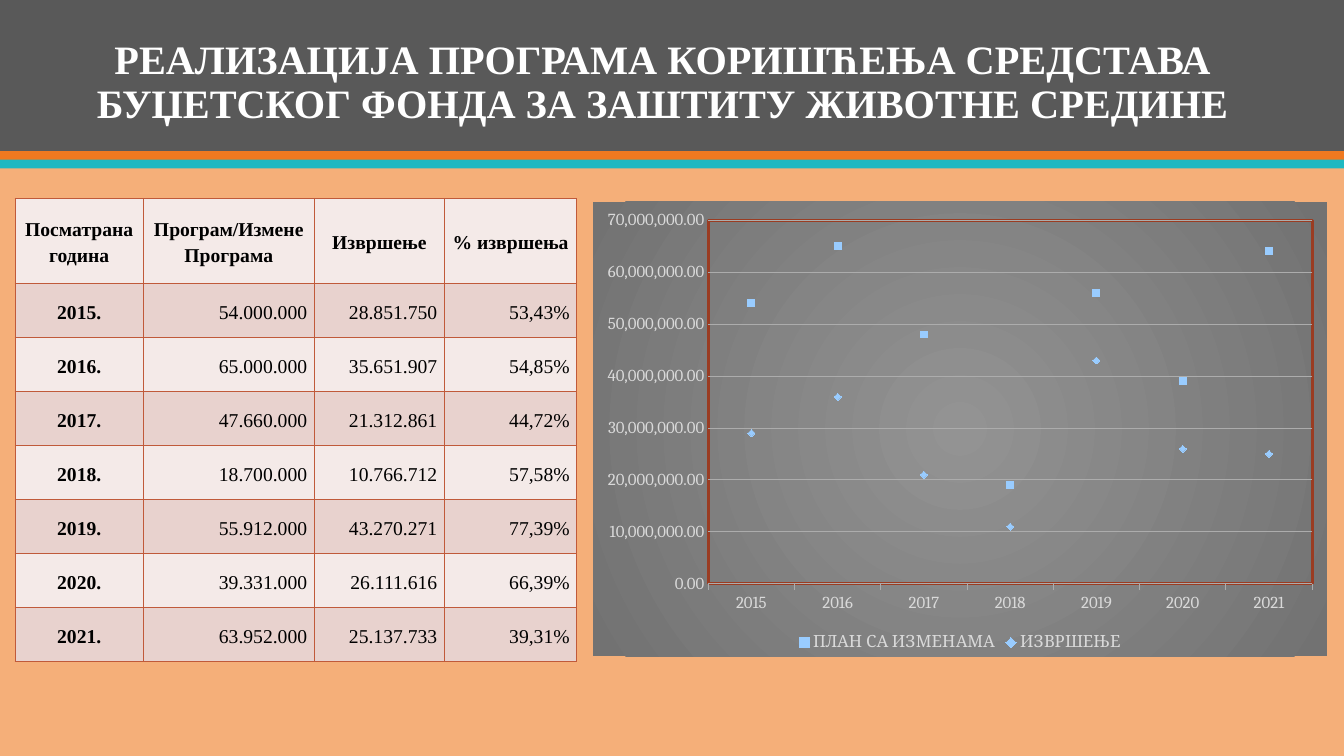
import pptx
import pptx.util
import pptx.chart.data
import pptx.dml.color
import pptx.enum.chart
import pptx.enum.shapes
import pptx.enum.text
import pptx.oxml
import pptx.oxml.ns

RGB = pptx.dml.color.RGBColor
PEACH = RGB(0xF5, 0xAF, 0x79)
DARK = RGB(0x59, 0x59, 0x59)
ORANGE = RGB(0xEF, 0x79, 0x20)
TEAL = RGB(0x1E, 0xB8, 0xC1)
WHITE = RGB(0xFF, 0xFF, 0xFF)
BLACK = RGB(0, 0, 0)
LIGHT = RGB(0xF4, 0xEA, 0xE8)
PINK = RGB(0xE8, 0xD2, 0xCE)
RUST = RGB(0xC0, 0x5A, 0x3A)
BROWN = RGB(0x9A, 0x3C, 0x22)
SILVER = RGB(0xD9, 0xD9, 0xD9)
GREY = RGB(0xAC, 0xAC, 0xAC)
SKY = RGB(0x99, 0xCC, 0xFF)
MID = RGB(0x93, 0x93, 0x93)
EDGE = RGB(0x72, 0x72, 0x72)

Pt = pptx.util.Pt
ALIGN = pptx.enum.text.PP_ALIGN
ANCHOR = pptx.enum.text.MSO_ANCHOR
MARK = pptx.enum.chart.XL_MARKER_STYLE
TICK = pptx.enum.chart.XL_TICK_MARK
NS = pptx.oxml.ns.nsdecls("a", "c")

TITLE = ("РЕАЛИЗАЦИЈА ПРОГРАМА КОРИШЋЕЊА СРЕДСТАВА "
         "БУЏЕТСКОГ ФОНДА ЗА ЗАШТИТУ ЖИВОТНЕ СРЕДИНЕ")
HEADS = ["Посматрана година", "Програм/Измене Програма", "Извршење", "% извршења"]
YEARS = [
    ["2015.", "54.000.000", "28.851.750", "53,43%"],
    ["2016.", "65.000.000", "35.651.907", "54,85%"],
    ["2017.", "47.660.000", "21.312.861", "44,72%"],
    ["2018.", "18.700.000", "10.766.712", "57,58%"],
    ["2019.", "55.912.000", "43.270.271", "77,39%"],
    ["2020.", "39.331.000", "26.111.616", "66,39%"],
    ["2021.", "63.952.000", "25.137.733", "39,31%"],
]
SERIES = [("ПЛАН СА ИЗМЕНАМА", 1, MARK.SQUARE), ("ИЗВРШЕЊЕ", 2, MARK.DIAMOND)]


class Page:
    """Places elements on a grid of 100 columns by 100 rows."""
    serif = "Times New Roman"
    label = "Cambria"

    def __init__(self, deck):
        self.wide, self.high = deck.slide_width, deck.slide_height
        self.slide = deck.slides.add_slide(deck.slide_layouts[5])
        self.shapes = self.slide.shapes
        back = self.slide.background.fill
        back.solid()
        back.fore_color.rgb = PEACH

    def col(self, share):
        return round(self.wide * share / 100)

    def row(self, share):
        return round(self.high * share / 100)

    def box(self, x, y, w, h):
        return self.col(x), self.row(y), self.col(w), self.row(h)

    def font(self, font, name, size, color, bold=False):
        font.name, font.size, font.bold = name, Pt(size), bold
        font.color.rgb = color

    def band(self, y, h, color):
        bar = self.shapes.add_shape(
            pptx.enum.shapes.MSO_SHAPE.RECTANGLE, *self.box(0, y, 100, h))
        bar.shadow.inherit = False
        bar.fill.solid()
        bar.fill.fore_color.rgb = color
        bar.line.fill.background()

    def title(self, text, *area):
        head = self.shapes.title
        head.left, head.top, head.width, head.height = self.box(*area)
        frame = head.text_frame
        frame.text = text
        frame.word_wrap = True
        frame.vertical_anchor = ANCHOR.BOTTOM
        para = frame.paragraphs[0]
        para.alignment, para.line_spacing = ALIGN.CENTER, 0.9
        self.font(para.font, self.serif, 28.8, WHITE, True)
        head.element.getparent().append(head.element)  # in front of the bands

    def cell(self, cell, text, fill, strong, align):
        cell.text = text
        cell.vertical_anchor = ANCHOR.MIDDLE
        cell.margin_left = cell.margin_right = pptx.util.Inches(0.07)
        cell.margin_top = cell.margin_bottom = 0
        cell.fill.solid()
        cell.fill.fore_color.rgb = fill
        para = cell.text_frame.paragraphs[0]
        para.alignment, para.line_spacing = align, 1.2
        self.font(para.font, self.serif, 14, BLACK, strong)
        props = cell._tc.get_or_add_tcPr()
        for spot, side in enumerate("LRTB"):
            props.insert(spot, pptx.oxml.parse_xml(
                f'<a:ln{side} {NS} w="12700"><a:solidFill><a:srgbClr val="{RUST}"/>'
                f'</a:solidFill></a:ln{side}>'))

    def table(self, data, x, y, cols, rows):
        area = self.box(x, y, sum(cols), sum(rows))
        grid = self.shapes.add_table(len(rows), len(cols), *area).table
        for part, share in zip(grid.columns, cols):
            part.width = self.col(share)
        for part, share in zip(grid.rows, rows):
            part.height = self.row(share)
        for r, line in enumerate(data):
            for c, text in enumerate(line):
                strong = r == 0 or c == 0
                self.cell(grid.cell(r, c), text, PINK if r % 2 else LIGHT,
                          strong, ALIGN.CENTER if strong else ALIGN.RIGHT)

    def axis(self, axis, tick):
        axis.major_tick_mark = tick
        axis.minor_tick_mark = TICK.NONE
        self.font(axis.tick_labels.font, self.label, 12, SILVER)

    def rule(self, line):
        line.color.rgb, line.width = GREY, Pt(0.75)

    def chart(self, cats, series, *area):
        data = pptx.chart.data.CategoryChartData(number_format="#,##0.00")
        data.categories = cats
        for name, vals, _ in series:
            data.add_series(name, vals)
        chart = self.shapes.add_chart(
            pptx.enum.chart.XL_CHART_TYPE.LINE_MARKERS, *self.box(*area), data).chart
        self.font(chart.font, self.label, 10, DARK)
        chart.has_title = False

        # Markers without joining lines
        plot = chart.plots[0]
        plot.vary_by_categories = False
        for item, (_, _, style) in zip(plot.series, series):
            item.smooth = False
            item.format.line.fill.background()
            mark = item.marker
            mark.style, mark.size = style, 5
            mark.format.fill.solid()
            mark.format.fill.fore_color.rgb = SKY
            mark.format.line.fill.background()

        # Axes and legend
        self.axis(chart.category_axis, TICK.OUTSIDE)
        self.rule(chart.category_axis.format.line)
        value = chart.value_axis
        self.axis(value, TICK.NONE)
        value.minimum_scale, value.maximum_scale, value.major_unit = 0, 7e7, 1e7
        value.tick_labels.number_format = "#,##0.00"
        value.tick_labels.number_format_is_linked = False
        value.format.line.fill.background()
        self.rule(value.major_gridlines.format.line)
        chart.has_legend = True
        chart.legend.position = pptx.enum.chart.XL_LEGEND_POSITION.BOTTOM
        chart.legend.include_in_layout = False
        self.font(chart.legend.font, self.label, 12, SILVER)
        self.backdrop(chart)

    def backdrop(self, chart):
        # Plot frame, its place, and the round gradient behind
        space = chart.element
        field = space.find(".//" + pptx.oxml.ns.qn("c:plotArea"))
        for old in field.findall(pptx.oxml.ns.qn("c:layout")):
            field.remove(old)
        place = "".join(f'<c:{key} val="{val}"/>' for key, val in [
            ("layoutTarget", "inner"), ("xMode", "edge"), ("yMode", "edge"),
            ("x", 0.157), ("y", 0.041), ("w", 0.823), ("h", 0.8)])
        field.insert(0, pptx.oxml.parse_xml(
            f'<c:layout {NS}><c:manualLayout>{place}</c:manualLayout></c:layout>'))
        field.append(pptx.oxml.parse_xml(
            f'<c:spPr {NS}><a:noFill/><a:ln w="25400"><a:solidFill>'
            f'<a:srgbClr val="{BROWN}"/></a:solidFill></a:ln></c:spPr>'))
        stops = "".join(f'<a:gs pos="{pos}"><a:srgbClr val="{tint}"/></a:gs>'
                        for pos, tint in [(0, MID), (100000, EDGE)])
        space.find(pptx.oxml.ns.qn("c:txPr")).addprevious(pptx.oxml.parse_xml(
            f'<c:spPr {NS}><a:gradFill><a:gsLst>{stops}</a:gsLst><a:path path="circle">'
            '<a:fillToRect l="50000" t="50000" r="50000" b="50000"/></a:path>'
            '</a:gradFill><a:ln><a:noFill/></a:ln></c:spPr>'))


def main():
    deck = pptx.Presentation()
    deck.slide_width, deck.slide_height = pptx.util.Inches(13.33), pptx.util.Inches(7.5)
    page = Page(deck)

    # Header
    for y, h, color in [(0, 20, DARK), (20, 1.17, ORANGE), (21.1, 1.17, TEAL)]:
        page.band(y, h, color)
    page.title(TITLE, 4.65, 3.73, 89.35, 13.73)

    # Budget table
    page.table([HEADS] + YEARS, 1.13, 26.27,
               [9.53, 12.73, 9.68, 9.85], [11.24] + [7.14] * len(YEARS))

    # Plan and spending by year, in whole millions
    cats = [line[0].rstrip(".") for line in YEARS]
    series = [(name, [round(int(line[c].replace(".", "")), -6) for line in YEARS], style)
              for name, c, style in SERIES]
    page.chart(cats, series, 44.13, 26.67, 54.6, 60.13)

    deck.save("out.pptx")


if __name__ == "__main__":
    main()
